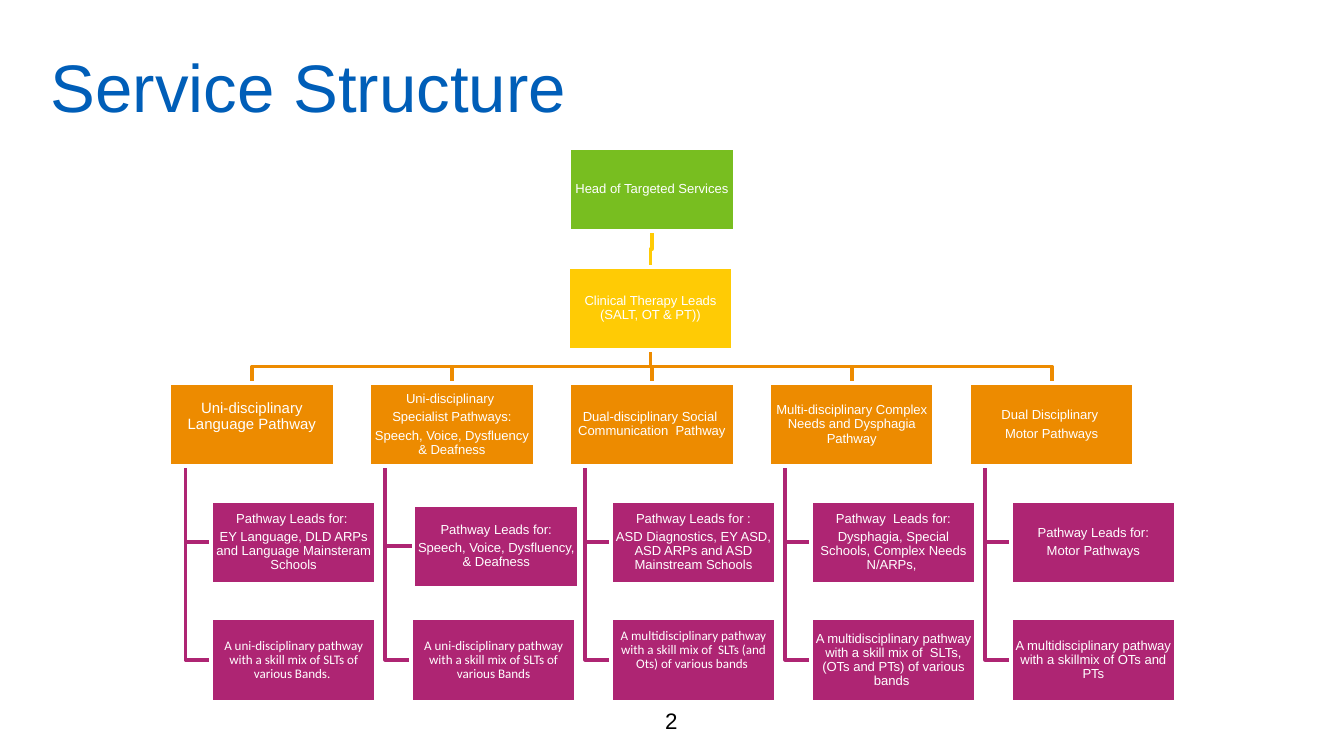
from dataclasses import dataclass

from pptx import Presentation
from pptx.dml.color import RGBColor
from pptx.enum.shapes import MSO_SHAPE as Shape
from pptx.enum.text import MSO_ANCHOR as Anchor, PP_ALIGN as Align
from pptx.util import Inches, Pt

COLORS = {
    "title": "005EB8", "text": "000000", "white": "FFFFFF",
    "head": "78BE20", "therapy": "FFCB05", "pathway": "ED8B00", "team": "AE2573",
}

# Chart grid, in inches: five columns and five rows of equal boxes
GRID_LEFT, GRID_TOP = 1.26, 1.1
COLUMN_STEP, ROW_STEP = 5.95 / 4, 3.5 / 4
BOX_WIDTH, BOX_HEIGHT = 1.23, 0.62
SIDE_INSET = 0.01
TEAM_INDENT = 0.31
TRUNK_INDENT = 0.12


@dataclass
class Box:
    column: int
    row: int
    color: str
    lines: tuple[str, ...]
    size: float = 7
    font: str = "Arial"
    indent: float = 0
    shift_x: float = 0
    shift_y: float = 0
    bottom_inset: float = 0

    @property
    def left(self) -> float:
        return GRID_LEFT + self.column * COLUMN_STEP + self.indent + self.shift_x

    @property
    def top(self) -> float:
        return GRID_TOP + self.row * ROW_STEP + self.shift_y

    @property
    def center_x(self) -> float:
        return self.left + BOX_WIDTH / 2

    @property
    def center_y(self) -> float:
        return self.top + BOX_HEIGHT / 2

    @property
    def bottom(self) -> float:
        return self.top + BOX_HEIGHT


def add_line_of_text(paragraph, text: str, size: float, font: str, color: str) -> None:
    run = paragraph.add_run()
    run.text = text
    run.font.size = Pt(size)
    run.font.name = font
    run.font.color.rgb = rgb(color)


def rgb(name: str) -> RGBColor:
    return RGBColor.from_string(COLORS[name])


def draw_label(slide, bounds: tuple[float, ...], text: str, size: float,
               color: str, align: Align, anchor: Anchor) -> None:
    shape = slide.shapes.add_textbox(*map(Inches, bounds))
    frame = shape.text_frame
    frame.word_wrap = True
    frame.vertical_anchor = anchor
    paragraph = frame.paragraphs[0]
    paragraph.alignment = align
    add_line_of_text(paragraph, text, size, "Arial", color)


def draw_box(slide, box: Box) -> None:
    shape = slide.shapes.add_shape(
        Shape.RECTANGLE, Inches(box.left), Inches(box.top),
        Inches(BOX_WIDTH), Inches(BOX_HEIGHT))
    shape.shadow.inherit = False
    shape.fill.solid()
    shape.fill.fore_color.rgb = rgb(box.color)
    shape.line.color.rgb = rgb("white")
    shape.line.width = Pt(2)
    frame = shape.text_frame
    frame.word_wrap = True
    frame.vertical_anchor = Anchor.MIDDLE
    frame.margin_left = frame.margin_right = Inches(SIDE_INSET)
    frame.margin_top = 0
    frame.margin_bottom = Inches(box.bottom_inset)
    for index, text in enumerate(box.lines):
        paragraph = frame.add_paragraph() if index else frame.paragraphs[0]
        paragraph.alignment = Align.CENTER
        paragraph.line_spacing = 0.9
        paragraph.space_after = Pt(0.35 * box.size)
        add_line_of_text(paragraph, text, box.size, box.font, "white")


def draw_path(slide, points: list[tuple[float, float]], color: str) -> None:
    start, *rest = [(Inches(x), Inches(y)) for x, y in points]
    builder = slide.shapes.build_freeform(*start)
    builder.add_line_segments(rest, close=False)
    shape = builder.convert_to_shape()
    shape.shadow.inherit = False
    shape.fill.background()
    shape.line.color.rgb = rgb(color)
    shape.line.width = Pt(2)


def link_down(slide, parent: Box, child: Box) -> None:
    middle = (parent.bottom + child.top) / 2
    draw_path(slide, [(parent.center_x, parent.bottom), (parent.center_x, middle),
                      (child.center_x, middle), (child.center_x, child.top)], child.color)


def link_side(slide, parent: Box, child: Box) -> None:
    trunk = parent.left + TRUNK_INDENT
    draw_path(slide, [(trunk, parent.bottom), (trunk, child.center_y),
                      (child.left, child.center_y)], child.color)


def pathway(column: int, *lines: str, **options) -> Box:
    return Box(column, 2, "pathway", lines, **options)


def leads(column: int, *lines: str, **options) -> Box:
    return Box(column, 3, "team", lines, indent=TEAM_INDENT, **options)


def staff(column: int, text: str, **options) -> Box:
    return Box(column, 4, "team", (text,), indent=TEAM_INDENT, **options)


HEAD = Box(2, 0, "head", ("Head of Targeted Services",))
THERAPY = Box(2, 1, "therapy", ("Clinical Therapy Leads (SALT, OT & PT))",),
              shift_x=-0.01, shift_y=0.01)

# Each branch: pathway, its leads, its staff
BRANCHES = [
    (pathway(0, "Uni-disciplinary Language Pathway", size=8, bottom_inset=0.12),
     leads(0, "Pathway Leads for: ", "EY Language, DLD ARPs and Language Mainsteram Schools"),
     staff(0, "A uni-disciplinary pathway with a skill mix of SLTs of various Bands. ",
           font="Calibri")),
    (pathway(1, "Uni-disciplinary ", "Specialist Pathways:",
             "Speech, Voice, Dysfluency & Deafness"),
     leads(1, "Pathway Leads for:", "Speech, Voice, Dysfluency, & Deafness",
           shift_x=0.02, shift_y=0.03),
     staff(1, "A uni-disciplinary pathway with a skill mix of SLTs of various Bands",
           font="Calibri")),
    (pathway(2, "Dual-disciplinary Social  Communication  Pathway"),
     leads(2, "Pathway Leads for :", "ASD Diagnostics, EY ASD, ASD ARPs and ASD Mainstream Schools"),
     staff(2, "A multidisciplinary pathway with a skill mix of  SLTs (and Ots) of various bands ",
           font="Calibri", bottom_inset=0.14)),
    (pathway(3, "Multi-disciplinary Complex Needs and Dysphagia Pathway"),
     leads(3, "Pathway  Leads for:", "Dysphagia, Special Schools, Complex Needs N/ARPs, "),
     staff(3, "A multidisciplinary pathway with a skill mix of  SLTs, (OTs and PTs) of various bands ")),
    (pathway(4, "Dual Disciplinary ", "Motor Pathways"),
     leads(4, "Pathway Leads for:", "Motor Pathways"),
     staff(4, "A multidisciplinary pathway with a skillmix of OTs and PTs")),
]


def main() -> None:
    presentation = Presentation()
    presentation.slide_width = Inches(10)
    presentation.slide_height = Inches(10 * 9 / 16)
    slide = presentation.slides.add_slide(presentation.slide_layouts[6])

    # Title and page number
    draw_label(slide, (0.28, 0.29, 7.35, 0.92), "Service Structure", 36,
               "title", Align.LEFT, Anchor.TOP)
    draw_label(slide, (3.83, 5.21, 2.33, 0.3), "2", 12,
               "text", Align.CENTER, Anchor.MIDDLE)

    # Lines, behind the boxes
    for branch, *teams in reversed(BRANCHES):
        for team in reversed(teams):
            link_side(slide, branch, team)
        link_down(slide, THERAPY, branch)
    link_down(slide, HEAD, THERAPY)

    # Boxes
    for box in (HEAD, THERAPY, *(box for branch in BRANCHES for box in branch)):
        draw_box(slide, box)

    presentation.save("out.pptx")


if __name__ == "__main__":
    main()
